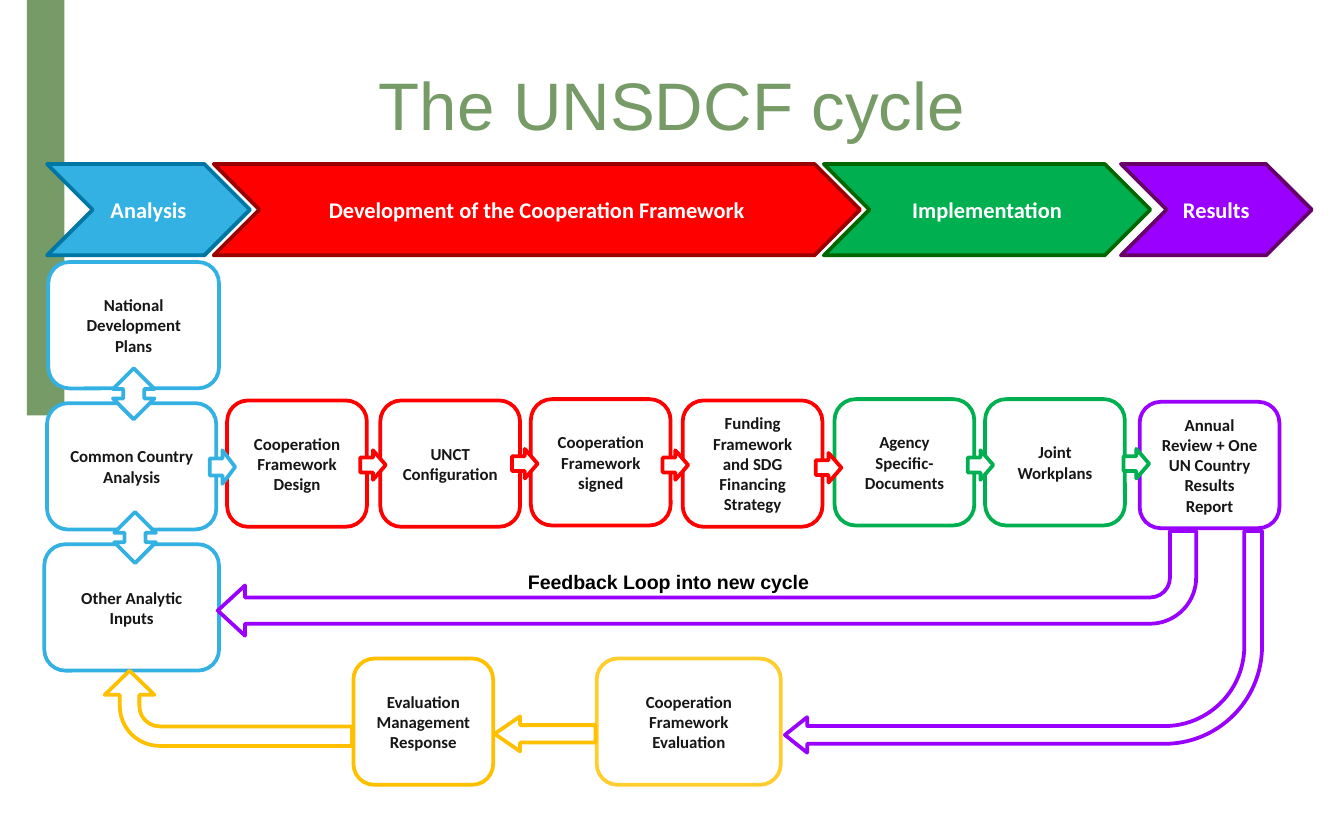
from pptx import Presentation
from pptx.dml.color import RGBColor
from pptx.enum.shapes import MSO_SHAPE
from pptx.enum.text import MSO_ANCHOR, PP_ALIGN
from pptx.util import Inches, Pt

SAGE, WHITE, BLACK, INK = "769B66", "FFFFFF", "000000", "161616"
BLUE, RED, GREEN, PURPLE = "33B1E3", "FF0000", "00B050", "9900FF"
AMBER, GOLD = "FFC000", "FFCD2D"

TITLE_FONT = {"name": "Arial", "size": Pt(36), "bold": False}
PHASE_FONT = {"name": "Calibri", "size": Pt(12), "bold": True}
STEP_FONT = {"name": "Calibri", "size": Pt(9), "bold": True}
LOOP_FONT = {"name": "Arial", "size": Pt(10.5), "bold": True}

# left, width, fill, line, text
PHASES = [
    (0.35, 1.51, BLUE, "0076A5", "Analysis"),
    (1.59, 4.81, RED, "990000", "Development of the Cooperation Framework"),
    (6.13, 2.43, GREEN, "006600", "Implementation"),
    (8.34, 1.42, PURPLE, "660066", "Results"),
]

# left, top, width, line, text
STEPS = [
    (0.36, 1.95, 1.27, BLUE, "National Development Plans"),
    (0.35, 3.00, 1.26, BLUE, "Common Country Analysis"),
    (0.33, 4.05, 1.30, BLUE, "Other Analytic Inputs"),
    (1.69, 2.98, 1.04, RED, "Cooperation Framework Design"),
    (2.83, 2.98, 1.04, RED, "UNCT Configuration"),
    (3.95, 2.97, 1.04, RED, "Cooperation Framework signed"),
    (5.08, 2.98, 1.04, RED, "Funding Framework and SDG Financing Strategy"),
    (6.21, 2.97, 1.04, GREEN, "Agency Specific-Documents"),
    (7.33, 2.97, 1.04, GREEN, "Joint Workplans"),
    (8.48, 2.99, 1.04, PURPLE, "Annual Review + One UN Country Results Report"),
    (2.63, 4.90, 1.04, AMBER, "Evaluation Management Response"),
    (4.44, 4.90, 1.37, GOLD, "Cooperation Framework Evaluation"),
]

# left, top, height, line
STEP_ARROWS = [
    (1.56, 3.35, 0.25, BLUE),
    (2.68, 3.35, 0.22, RED),
    (3.81, 3.34, 0.22, RED),
    (4.93, 3.35, 0.22, RED),
    (6.07, 3.37, 0.22, RED),
    (7.20, 3.35, 0.22, GREEN),
    (8.36, 3.34, 0.22, GREEN),
]

# kind, box, line, rotation, adjustments
LOOP_ARROWS = [
    (MSO_SHAPE.BENT_ARROW, (1.62, 3.95, 7.28, 0.78), PURPLE, 180,
     (0.25, 0.24, 0.26, 0.44)),
    (MSO_SHAPE.BENT_ARROW, (5.84, 3.95, 3.55, 1.65), PURPLE, 180,
     (0.08, 0.08, 0.1, 0.44)),
    (MSO_SHAPE.RIGHT_ARROW, (3.68, 5.33, 0.75, 0.26), AMBER, 180, (0.5, 0.73)),
    (MSO_SHAPE.BENT_ARROW, (1.42, 4.35, 0.56, 1.84), AMBER, 270,
     (0.26, 0.33, 0.32, 0.53)),
]


def rgb(value):
    return RGBColor.from_string(value)


def write(tf, text, font, color, align=PP_ALIGN.CENTER):
    tf.word_wrap = True
    p = tf.paragraphs[0]
    p.alignment = align
    r = p.add_run()
    r.text = text
    for key, value in font.items():
        setattr(r.font, key, value)
    r.font.color.rgb = rgb(color)


def add_block(s, kind, box, fill=WHITE, line=None, rotation=0, adjustments=()):
    sp = s.shapes.add_shape(kind, *[Inches(v) for v in box])
    sp.shadow.inherit = False
    sp.rotation = rotation
    for i, value in enumerate(adjustments):
        sp.adjustments[i] = value
    sp.fill.solid()
    sp.fill.fore_color.rgb = rgb(fill)
    if line:
        sp.line.color.rgb = rgb(line)
        sp.line.width = Pt(2)
    else:
        sp.line.fill.background()
    return sp


def add_title(s, text):
    sp = s.shapes.title
    place = {"left": 0.5, "top": 0.25, "width": 9, "height": 1.04}
    for key, value in place.items():
        setattr(sp, key, Inches(value))
    sp.text_frame.vertical_anchor = MSO_ANCHOR.MIDDLE
    write(sp.text_frame, text, TITLE_FONT, SAGE)


def add_phase(s, left, width, fill, line, text):
    sp = add_block(s, MSO_SHAPE.CHEVRON, (left, 1.22, width, 0.68), fill, line)
    write(sp.text_frame, text, PHASE_FONT, WHITE)


def add_step(s, left, top, width, line, text):
    box = (left, top, width, 0.94)
    sp = add_block(s, MSO_SHAPE.ROUNDED_RECTANGLE, box, line=line)
    write(sp.text_frame, text, STEP_FONT, INK)


def add_label(s, box, text):
    sp = s.shapes.add_textbox(*[Inches(v) for v in box])
    write(sp.text_frame, text, LOOP_FONT, BLACK, PP_ALIGN.LEFT)


def main():
    prs = Presentation()
    prs.slide_width, prs.slide_height = Inches(10), Inches(6.25)
    s = prs.slides.add_slide(prs.slide_layouts[5])

    # Side bar and title
    add_block(s, MSO_SHAPE.RECTANGLE, (0.2, 0, 0.28, 3.09), SAGE)
    add_title(s, "The UNSDCF cycle")

    # Steps and the phases above them
    for step in STEPS:
        add_step(s, *step)
    add_label(s, (3.83, 4.19, 2.34, 0.28), "Feedback Loop into new cycle")
    for phase in PHASES:
        add_phase(s, *phase)

    # Arrows between steps
    for left, top, height, line in STEP_ARROWS:
        box = (left, top, 0.19, height)
        add_block(s, MSO_SHAPE.RIGHT_ARROW, box, line=line)
    for left, top in [(0.84, 2.74), (0.85, 3.81)]:
        box = (left, top, 0.31, 0.38)
        add_block(s, MSO_SHAPE.UP_DOWN_ARROW, box, line=BLUE)

    # Feedback and evaluation loops
    for kind, box, line, rotation, adjustments in LOOP_ARROWS:
        add_block(s, kind, box, WHITE, line, rotation, adjustments)

    prs.save("out.pptx")


if __name__ == "__main__":
    main()
